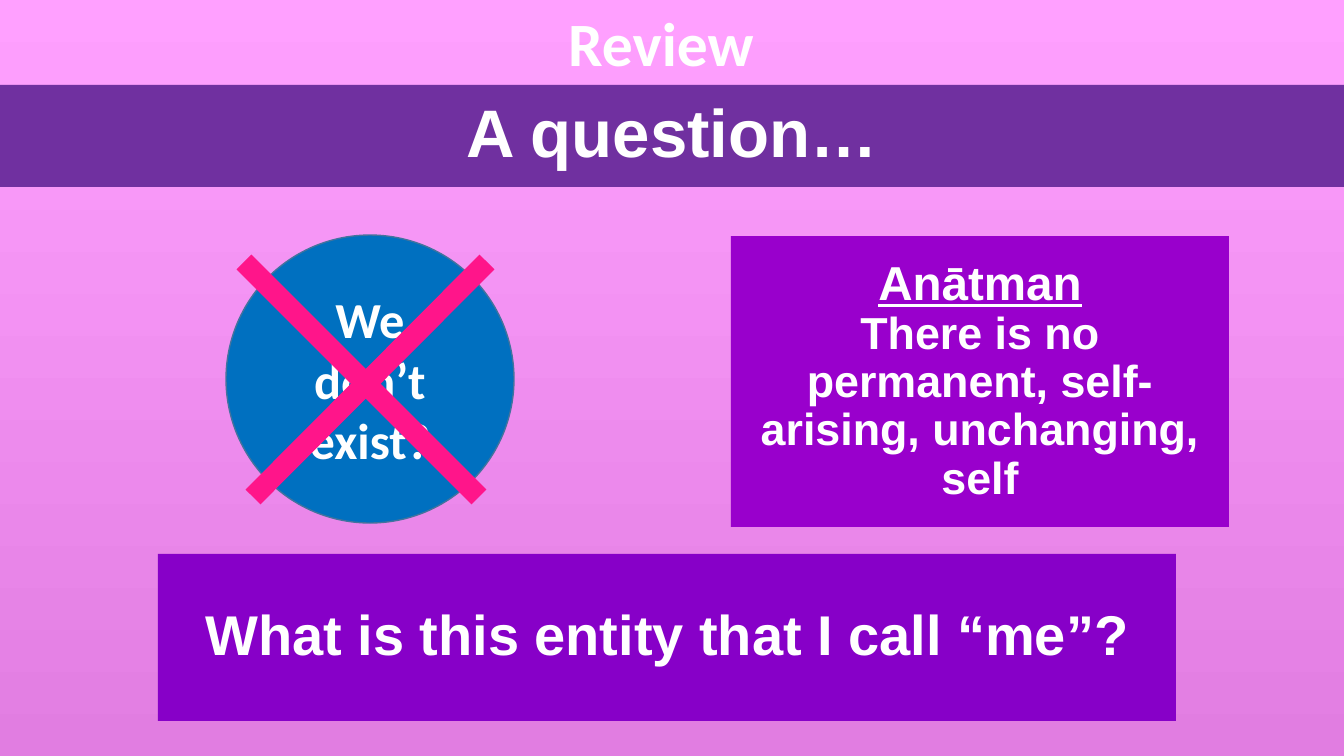
from pptx import Presentation
from pptx.dml.color import RGBColor
from pptx.enum.shapes import MSO_CONNECTOR, MSO_SHAPE
from pptx.enum.text import MSO_ANCHOR, PP_ALIGN
from pptx.oxml.ns import qn
from pptx.util import Pt
from lxml import etree

PX = 914400 / 100.8
WHITE = RGBColor(0xFF, 0xFF, 0xFF)
SKY_TOP = RGBColor(0xFF, 0xA0, 0xFF)
SKY_BOTTOM = RGBColor(0xE1, 0x7D, 0xE1)
BAND = RGBColor(0x70, 0x30, 0xA0)
BLUE = RGBColor(0x00, 0x70, 0xC0)
BLUE_EDGE = RGBColor(0x43, 0x73, 0x9E)
VIOLET = RGBColor(0x99, 0x00, 0xCC)
DEEP_VIOLET = RGBColor(0x87, 0x00, 0xC8)
PINK = RGBColor(0xFF, 0x15, 0x8A)


def px(*lengths):
    return [round(n * PX) for n in lengths]


def write(sp, lines, font, spacing, anchor):
    """Fill a shape with centred bold white paragraphs, given as (text, size)."""
    tf = sp.text_frame
    tf.word_wrap = True
    tf.vertical_anchor = anchor
    for i, (text, size) in enumerate(lines):
        p = tf.add_paragraph() if i else tf.paragraphs[0]
        p.text = text
        p.alignment = PP_ALIGN.CENTER
        p.line_spacing = spacing
        p.font.name = font
        p.font.size = Pt(size)
        p.font.bold = True
        p.font.color.rgb = WHITE


prs = Presentation()
prs.slide_width, prs.slide_height = px(1344, 756)
s = prs.slides.add_slide(prs.slide_layouts[6])

fill = s.background.fill
fill.gradient()
fill.gradient_angle = 270
for stop, position, color in zip(fill.gradient_stops, (0, 1), (SKY_TOP, SKY_BOTTOM)):
    stop.position = position
    stop.color.rgb = color

review = s.shapes.add_textbox(*px(370, 0, 582, 85))
write(review, [("Review", 44)], "Calibri", 1.0, MSO_ANCHOR.TOP)

RECT, OVAL = MSO_SHAPE.RECTANGLE, MSO_SHAPE.OVAL
panels = [
    (RECT, (0, 85, 1344, 102), BAND, None, "Arial", 0.9, [("A question…", 48)]),
    (OVAL, (226, 235, 288, 288), BLUE, BLUE_EDGE, "Calibri", 1.0,
     [("We don’t exist?", 36)]),
    (RECT, (731, 236, 498, 291), VIOLET, None, "Arial", 0.9,
     [("Anātman", 34),
      ("There is no permanent, self-arising, unchanging, self", 32)]),
    (RECT, (158, 554, 1018, 167), DEEP_VIOLET, None, "Arial", 0.9,
     [("What is this entity that I call “me”?", 40)]),
]
for kind, box, color, edge, font, spacing, lines in panels:
    sp = s.shapes.add_shape(kind, *px(*box))
    sp.shadow.inherit = False
    sp.fill.solid()
    sp.fill.fore_color.rgb = color
    if edge:
        sp.line.color.rgb = edge
        sp.line.width = Pt(1)
    else:
        sp.line.fill.background()
    write(sp, lines, font, spacing, MSO_ANCHOR.MIDDLE)
    if lines[0][0] == "Anātman":
        sp.text_frame.paragraphs[0].font.underline = True

# Cross over the circle
for x1, x2 in ((244, 479), (487, 253)):
    stroke = s.shapes.add_connector(MSO_CONNECTOR.STRAIGHT, *px(x1, 262, x2, 497))
    stroke.line.color.rgb = PINK
    stroke.line.width = Pt(15)
    etree.SubElement(stroke._element.spPr, qn("a:effectLst"))

prs.save("out.pptx")
